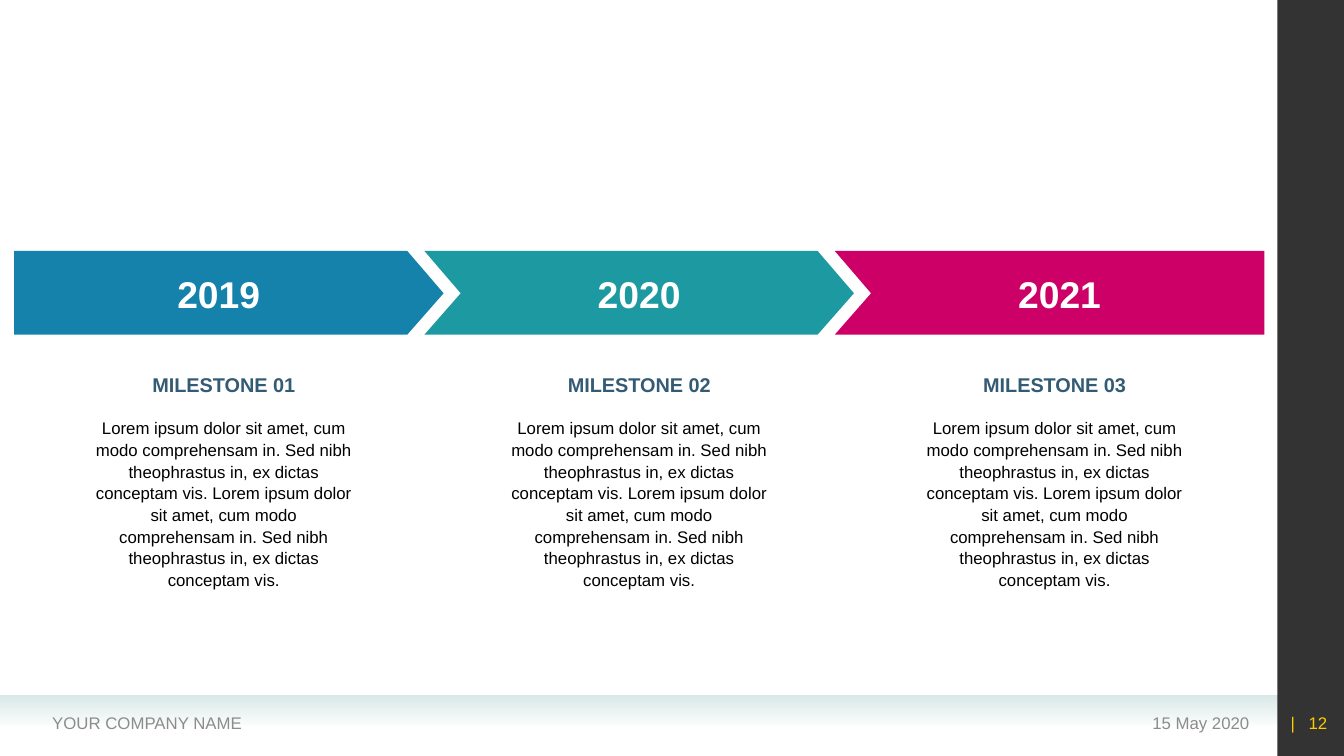
from dataclasses import dataclass

from lxml import etree
from pptx import Presentation
from pptx.dml.color import RGBColor
from pptx.enum.shapes import MSO_SHAPE
from pptx.enum.text import MSO_ANCHOR, PP_ALIGN
from pptx.oxml.ns import qn
from pptx.shapes.autoshape import Shape
from pptx.slide import Slide
from pptx.util import Inches, Pt

RECT = MSO_SHAPE.RECTANGLE
TOP, MIDDLE = MSO_ANCHOR.TOP, MSO_ANCHOR.MIDDLE
LEFT, CENTER, RIGHT = PP_ALIGN.LEFT, PP_ALIGN.CENTER, PP_ALIGN.RIGHT

BLUE = RGBColor(0x14, 0x82, 0xAB)
TEAL = RGBColor(0x1D, 0x9A, 0xA1)
PINK = RGBColor(0xCC, 0x00, 0x66)
NAVY = RGBColor(0x33, 0x5B, 0x74)
GRAY = RGBColor(0x8C, 0x8C, 0x8C)
MIST = RGBColor(0xD9, 0xE9, 0xE8)
YELLOW = RGBColor(0xFF, 0xCC, 0x00)
BLACK = RGBColor(0x00, 0x00, 0x00)
WHITE = RGBColor(0xFF, 0xFF, 0xFF)

FONT = "Arial"
LOREM = ("Lorem ipsum dolor sit amet, cum modo comprehensam in. "
         "Sed nibh theophrastus in, ex dictas conceptam vis.")

# Timeline geometry in inches
BAND_TOP, BAND_MID, BAND_BOTTOM = 2.49, 2.91, 3.32
BAND_LEFT, BAND_RIGHT = 0.14, 12.54
BAND_STEP, BAND_LENGTH, POINT = 4.07, 3.9, 0.36
YEAR_CENTER, YEAR_STEP = 2.17, 4.17
TEXT_CENTER, TEXT_STEP = 2.22, 4.12


@dataclass
class Milestone:
    year: str
    title: str
    color: RGBColor


@dataclass
class TextStyle:
    size: float
    color: RGBColor
    align: PP_ALIGN = LEFT
    bold: bool = False
    anchor: MSO_ANCHOR = MIDDLE
    wrap: bool = True


MILESTONES = [
    Milestone("2019", "MILESTONE 01", BLUE),
    Milestone("2020", "MILESTONE 02", TEAL),
    Milestone("2021", "MILESTONE 03", PINK),
]
YEAR = TextStyle(26.6, WHITE, CENTER, bold=True, wrap=False)
HEADING = TextStyle(14.2, NAVY, CENTER, bold=True, wrap=False)
BODY = TextStyle(12, BLACK, CENTER, anchor=TOP)


def add_text(slide: Slide, text: str, left: float, top: float, width: float,
             height: float, style: TextStyle) -> Shape:
    sp = slide.shapes.add_textbox(Inches(left), Inches(top),
                                  Inches(width), Inches(height))
    tf = sp.text_frame
    tf.word_wrap = style.wrap
    tf.vertical_anchor = style.anchor
    p = tf.paragraphs[0]
    p.text = text
    p.alignment = style.align
    font = p.runs[0].font
    font.name, font.size, font.bold = FONT, Pt(style.size), style.bold
    font.color.rgb = style.color
    return sp


def add_bar(slide: Slide, left: float, top: float, width: float,
            height: float) -> Shape:
    sp = slide.shapes.add_shape(RECT, Inches(left), Inches(top),
                                Inches(width), Inches(height))
    sp.shadow.inherit = False
    sp.line.fill.background()
    return sp


def set_alpha(color_element: etree.ElementBase, percent: int) -> None:
    alpha = etree.SubElement(color_element, qn("a:alpha"))
    alpha.set("val", str(percent * 1000))


def add_frame(slide: Slide) -> None:
    # Fading footer strip
    strip = add_bar(slide, 0, 6.9, 12.67, 0.31)
    strip.fill.gradient()
    strip.fill.gradient_angle = 270
    for stop, position in zip(strip.fill.gradient_stops, (0, 1)):
        stop.position = position
        stop.color.rgb = MIST
    colors = list(strip.element.spPr.iter(qn("a:srgbClr")))
    set_alpha(colors[-1], 0)

    # Dark side panel
    panel = add_bar(slide, 12.67, 0, 0.67, 7.5)
    panel.fill.solid()
    panel.fill.fore_color.rgb = BLACK
    set_alpha(next(panel.element.spPr.iter(qn("a:srgbClr"))), 80)

    # Footer texts
    add_text(slide, "15 May 2020", 9.1, 6.97, 3.39, 0.4,
             TextStyle(12, GRAY, RIGHT))
    add_text(slide, "YOUR COMPANY NAME", 0.42, 6.97, 4.9, 0.4,
             TextStyle(12, GRAY))
    number = add_text(slide, "|\t12", 12.6, 6.97, 0.67, 0.4,
                      TextStyle(12, YELLOW))
    tf = number.text_frame
    tf.margin_left, tf.margin_right = Inches(0.2), 0
    pPr = tf.paragraphs[0]._p.get_or_add_pPr()
    tabs = etree.SubElement(pPr, qn("a:tabLst"))
    etree.SubElement(tabs, qn("a:tab"), pos=str(Inches(0.18)), algn="l")


def add_band(slide: Slide, index: int, color: RGBColor) -> None:
    left = BAND_LEFT + index * BAND_STEP
    is_last = index == len(MILESTONES) - 1
    right = BAND_RIGHT if is_last else left + BAND_LENGTH
    points = [(left, BAND_TOP), (right, BAND_TOP)]
    if not is_last:
        points.append((right + POINT, BAND_MID))
    points += [(right, BAND_BOTTOM), (left, BAND_BOTTOM)]
    if index > 0:
        points.append((left + POINT, BAND_MID))
    corners = [(Inches(x), Inches(y)) for x, y in points]
    builder = slide.shapes.build_freeform(*corners[0])
    builder.add_line_segments(corners[1:], close=True)
    sp = builder.convert_to_shape()
    sp.shadow.inherit = False
    sp.fill.solid()
    sp.fill.fore_color.rgb = color
    sp.line.fill.background()


def add_milestone(slide: Slide, index: int, item: Milestone) -> None:
    add_band(slide, index, item.color)
    year_x = YEAR_CENTER + index * YEAR_STEP
    text_x = TEXT_CENTER + index * TEXT_STEP
    add_text(slide, item.year, year_x - 0.6, 2.58, 1.2, 0.66, YEAR)
    add_text(slide, item.title, text_x - 0.9, 3.61, 1.8, 0.41, HEADING)
    body = add_text(slide, f"{LOREM} {LOREM}", text_x - 1.34, 4.11,
                    2.68, 1.82, BODY)
    tf = body.text_frame
    tf.margin_left = tf.margin_right = Inches(0.04)
    tf.margin_top = tf.margin_bottom = Inches(0.02)
    tf.paragraphs[0].line_spacing = Pt(15.5)


def main() -> None:
    prs = Presentation()
    prs.slide_width, prs.slide_height = Inches(13.33), Inches(7.5)
    slide = prs.slides.add_slide(prs.slide_layouts[6])
    add_frame(slide)
    for index, item in enumerate(MILESTONES):
        add_milestone(slide, index, item)
    prs.save("out.pptx")


if __name__ == "__main__":
    main()
